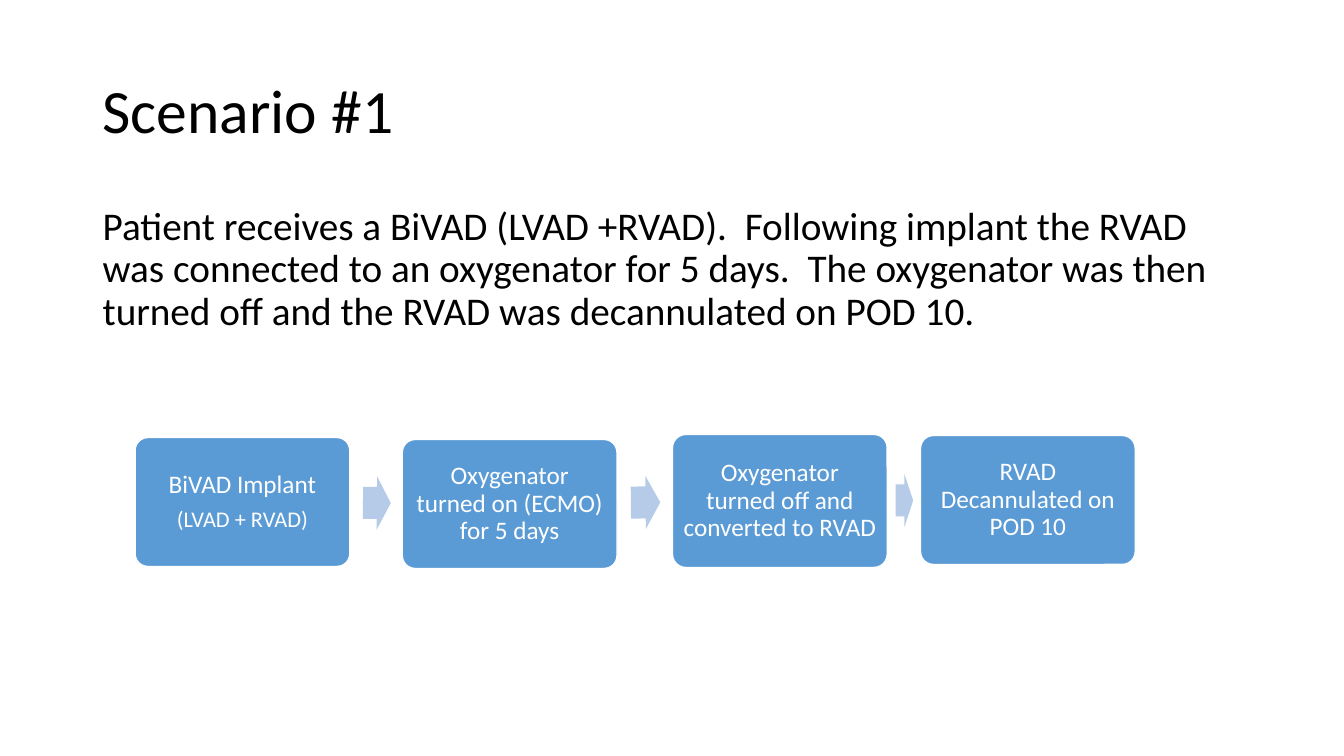
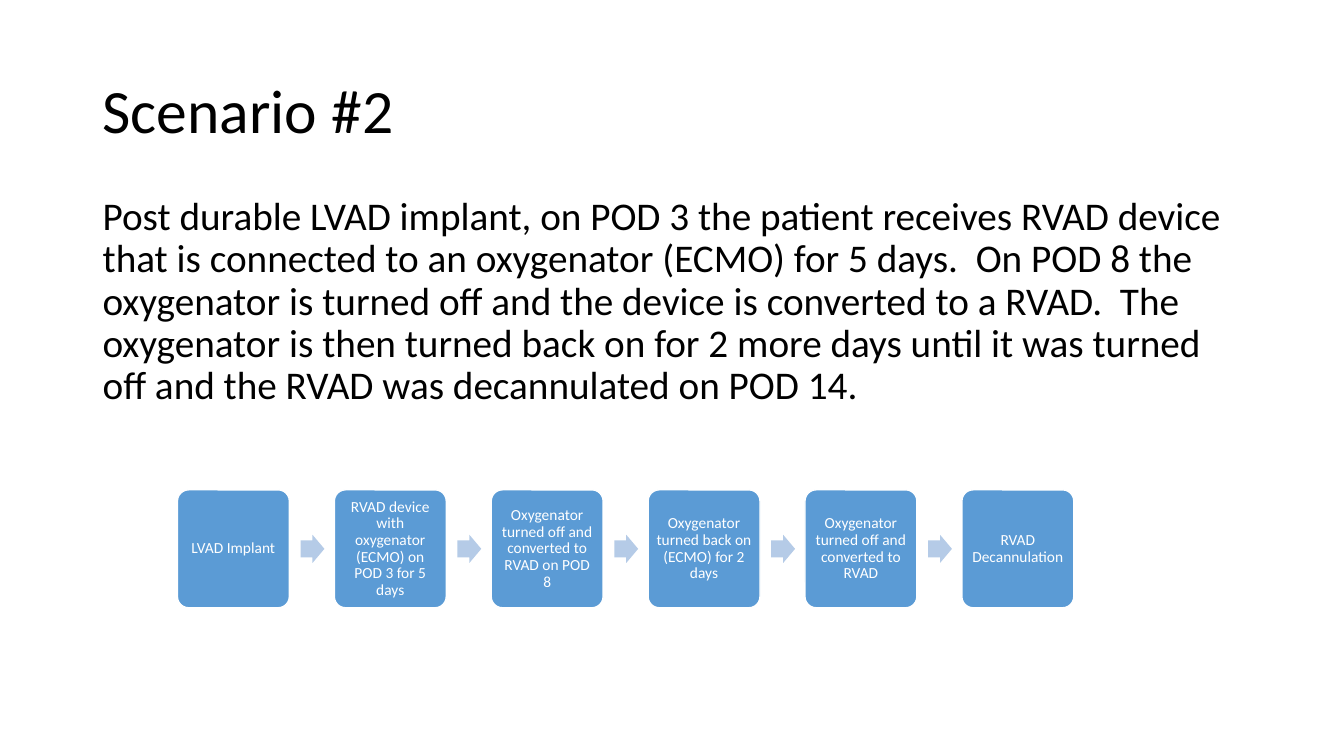
from math import atan2, degrees

from pptx import Presentation
from pptx.dml.color import RGBColor
from pptx.enum.shapes import MSO_SHAPE
from pptx.enum.text import MSO_ANCHOR, PP_ALIGN
from pptx.util import Emu, Pt

PX = 9144  # 100 px to the inch
FONT = "Calibri"
BLACK, WHITE, STEP_FILL, ARROW_FILL = "000000", "FFFFFF", "5B9BD5", "B5CBE7"
BODY_LEFT, BODY_WIDTH = 92, 1150

# Each step holds its paragraphs; lefts, tops and heights follow the step order.
SCENARIOS = [
    {
        "title": "Scenario #1",
        "story": "Patient receives a BiVAD (LVAD +RVAD).  Following implant the RVAD was "
                 "connected to an oxygenator for 5 days.  The oxygenator was then turned off "
                 "and the RVAD was decannulated on POD 10.",
        "story_top": 200,
        "steps": [
            [("BiVAD Implant", 18), ("(LVAD + RVAD)", 16)],
            [("Oxygenator turned on (ECMO) for 5 days", 18)],
            [("Oxygenator turned off and converted to RVAD", 18)],
            [("RVAD Decannulated on POD 10", 18)],
        ],
        "lefts": [134, 399, 667, 913],
        "tops": [434, 436, 431, 432],
        "heights": [128, 128, 132, 128],
        "step_width": 213, "inset": 7, "arrow_height": 53,
    },
    {
        "title": "Scenario #2",
        "story": "Post durable LVAD implant, on POD 3 the patient receives RVAD device that is "
                 "connected to an oxygenator (ECMO) for 5 days.  On POD 8 the oxygenator is "
                 "turned off and the device is converted to a RVAD.  The oxygenator is then "
                 "turned back on for 2 more days until it was turned off and the RVAD was "
                 "decannulated on POD 14.",
        "story_top": 190,
        "steps": [
            [("LVAD Implant", 11)],
            [("RVAD device with oxygenator (ECMO) on POD 3 for 5 days", 11)],
            [("Oxygenator turned off and converted to RVAD on POD 8", 11)],
            [("Oxygenator turned back on (ECMO) for 2 days", 11)],
            [("Oxygenator turned off and converted to RVAD", 11)],
            [("RVAD Decannulation", 11)],
        ],
        "lefts": [176 + 778 * i / 5 for i in range(6)],
        "tops": [486] * 6,
        "heights": [117] * 6,
        "step_width": 111, "inset": 5, "arrow_height": 28,
    },
]


def color(hex_string):
    return RGBColor.from_string(hex_string)


def box(*lengths):
    return [Emu(round(length * PX)) for length in lengths]


def write(frame, paragraphs, ink, anchor, align=PP_ALIGN.LEFT, after=0):
    """Fill a text frame; after is the space below a paragraph as a share of its size."""
    frame.word_wrap = True
    frame.vertical_anchor = anchor
    for i, (text, size) in enumerate(paragraphs):
        paragraph = frame.add_paragraph() if i else frame.paragraphs[0]
        paragraph.alignment = align
        paragraph.line_spacing = 0.9
        paragraph.space_after = Pt(round(size * after))
        run = paragraph.add_run()
        run.text = text
        run.font.name, run.font.size = FONT, Pt(size)
        run.font.color.rgb = color(ink)


def add_body_text(slide, text, size, top, height, anchor):
    textbox = slide.shapes.add_textbox(*box(BODY_LEFT, top, BODY_WIDTH, height))
    write(textbox.text_frame, [(text, size)], BLACK, anchor)


def add_filled(slide, kind, place, fill, adjustments):
    shape = slide.shapes.add_shape(kind, *box(*place))
    shape.shadow.inherit = False
    shape.fill.solid()
    shape.fill.fore_color.rgb = color(fill)
    shape.line.fill.background()
    for i, value in enumerate(adjustments):
        shape.adjustments[i] = value
    return shape


def add_step(slide, paragraphs, place, inset):
    step = add_filled(slide, MSO_SHAPE.ROUNDED_RECTANGLE, place, STEP_FILL, [0.1])
    step.line.color.rgb = color(WHITE)
    step.line.width = Pt(1)
    frame = step.text_frame
    frame.margin_left = frame.margin_top = Emu(inset * PX)
    frame.margin_right = frame.margin_bottom = Emu(inset * PX)
    write(frame, paragraphs, WHITE, MSO_ANCHOR.MIDDLE, PP_ALIGN.CENTER, 0.35)


def add_arrow(slide, start, end, height):
    """Arrow in the middle half of the gap, tilted along the line between two step centres."""
    (x1, y1, w1, h1), (x2, y2, w2, h2) = start, end
    gap = x2 - x1 - w1
    mid1, mid2 = y1 + h1 / 2, y2 + h2 / 2
    place = (x1 + w1 + gap / 4, (mid1 + mid2 - height) / 2, gap * 0.53, height)
    arrow = add_filled(slide, MSO_SHAPE.RIGHT_ARROW, place, ARROW_FILL, [0.6, 0.5])
    arrow.rotation = round(degrees(atan2(mid2 - mid1, x2 - x1)), 1)


def add_scenario(deck, scenario):
    slide = deck.slides.add_slide(deck.slide_layouts[6])
    add_body_text(slide, scenario["title"], 44, 40, 145, MSO_ANCHOR.MIDDLE)
    add_body_text(slide, scenario["story"], 28, scenario["story_top"], 476, MSO_ANCHOR.TOP)
    places = [(left, top, scenario["step_width"], height) for left, top, height
              in zip(scenario["lefts"], scenario["tops"], scenario["heights"])]
    for paragraphs, place in zip(scenario["steps"], places):
        add_step(slide, paragraphs, place, scenario["inset"])
    for start, end in zip(places, places[1:]):
        add_arrow(slide, start, end, scenario["arrow_height"])


def main():
    deck = Presentation()
    deck.slide_width, deck.slide_height = box(1333, 750)
    for scenario in SCENARIOS:
        add_scenario(deck, scenario)
    deck.save("out.pptx")


if __name__ == "__main__":
    main()
